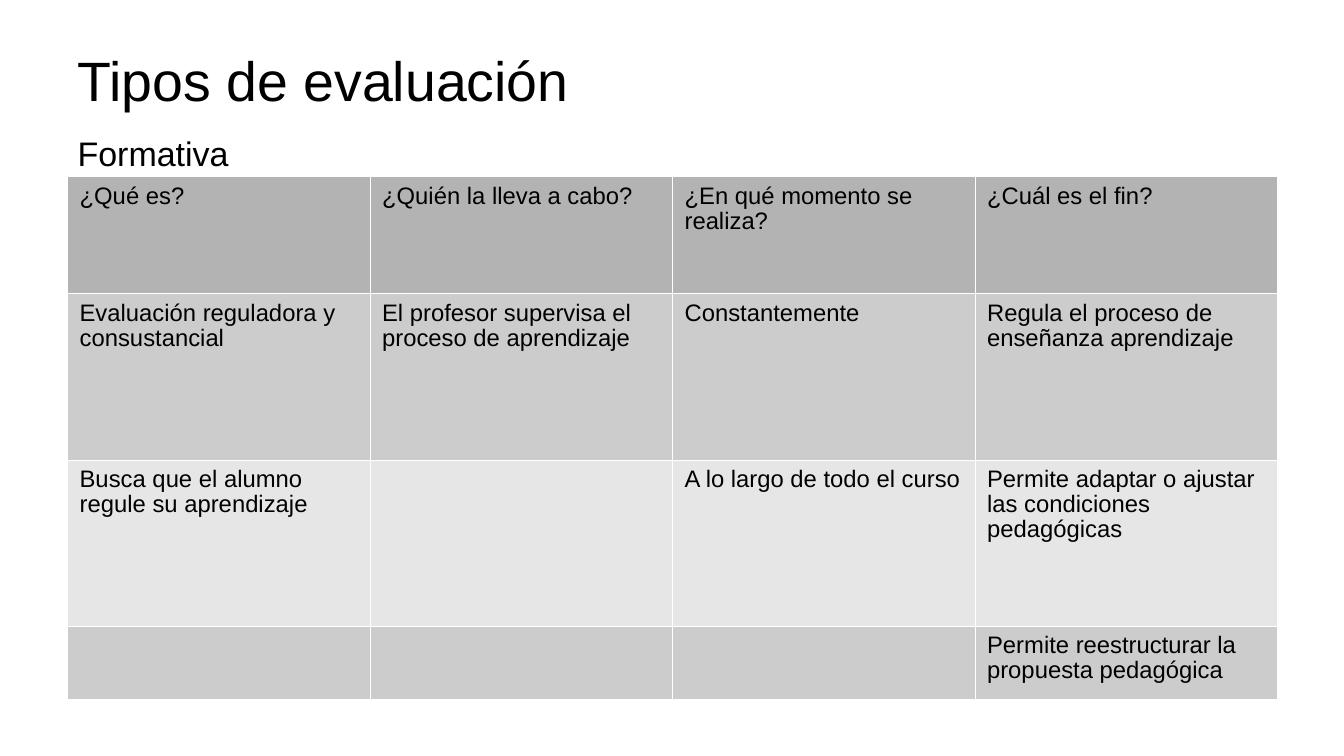
from lxml.etree import SubElement
from pptx import Presentation
from pptx.dml.color import RGBColor
from pptx.enum.text import MSO_ANCHOR, MSO_AUTO_SIZE, PP_ALIGN
from pptx.oxml.ns import qn
from pptx.util import Inches, Pt

TITLE = [("Tipos de evaluación", 39.6), ("Formativa", 24.3)]
ROWS = [
    (1.16, "B3B3B3", ["¿Qué es?", "¿Quién la lleva a cabo?",
                      "¿En qué momento se realiza?", "¿Cuál es el fin?"]),
    (1.65, "CCCCCC", ["Evaluación reguladora y consustancial",
                      "El profesor supervisa el proceso de aprendizaje",
                      "Constantemente",
                      "Regula el proceso de enseñanza aprendizaje"]),
    (1.65, "E6E6E6", ["Busca que el alumno regule su aprendizaje", "",
                      "A lo largo de todo el curso",
                      "Permite adaptar o ajustar las condiciones pedagógicas"]),
    (0.73, "CCCCCC", ["", "", "", "Permite reestructurar la propuesta pedagógica"]),
]
LEFT, WIDTH = 0.67, 12
TITLE_TOP, TITLE_HEIGHT = 0.1, 1.65
BORDER, BORDER_WIDTH = "FFFFFF", 0.06


def color(value):
    return RGBColor.from_string(value)


def write(frame, lines, spacing=1.0, font="Arial", ink="000000"):
    para = frame.paragraphs[0]
    para.alignment = PP_ALIGN.LEFT
    para.line_spacing = spacing
    for index, (text, size) in enumerate(lines):
        if index:
            para.add_line_break()
        span = para.add_run()
        span.text = text
        span.font.name = font
        span.font.size = Pt(size)
        span.font.color.rgb = color(ink)


def add_borders(cell):
    properties = cell._tc.get_or_add_tcPr()
    for side in ("a:lnL", "a:lnR", "a:lnT", "a:lnB"):
        line = SubElement(properties, qn(side), w=str(Pt(BORDER_WIDTH)))
        fill = SubElement(line, qn("a:solidFill"))
        SubElement(fill, qn("a:srgbClr"), val=BORDER)


def add_title(page):
    box = page.shapes.title
    box.left, box.top = Inches(LEFT), Inches(TITLE_TOP)
    box.width, box.height = Inches(WIDTH), Inches(TITLE_HEIGHT)
    frame = box.text_frame
    frame.word_wrap = True
    frame.auto_size = MSO_AUTO_SIZE.NONE
    frame.vertical_anchor = MSO_ANCHOR.MIDDLE
    write(frame, TITLE, spacing=1.5)


def add_grid(page):
    columns = len(ROWS[0][2])
    height = sum(row[0] for row in ROWS)
    grid = page.shapes.add_table(
        len(ROWS), columns, Inches(LEFT), Inches(TITLE_TOP + TITLE_HEIGHT),
        Inches(WIDTH), Inches(height)).table
    for column in grid.columns:
        column.width = Inches(WIDTH / columns)
    for row, (row_height, shade, texts) in zip(grid.rows, ROWS):
        row.height = Inches(row_height)
        for cell, text in zip(row.cells, texts):
            add_borders(cell)
            cell.fill.solid()
            cell.fill.fore_color.rgb = color(shade)
            cell.margin_left = cell.margin_right = Inches(0.12)
            cell.margin_top, cell.margin_bottom = Inches(0.08), Inches(0.06)
            if text:
                write(cell.text_frame, [(text, 17)], spacing=0.93)


def main():
    deck = Presentation()
    deck.slide_width, deck.slide_height = Inches(13.33), Inches(7.5)
    page = deck.slides.add_slide(deck.slide_layouts[5])
    add_title(page)
    add_grid(page)
    deck.save("out.pptx")


if __name__ == "__main__":
    main()
